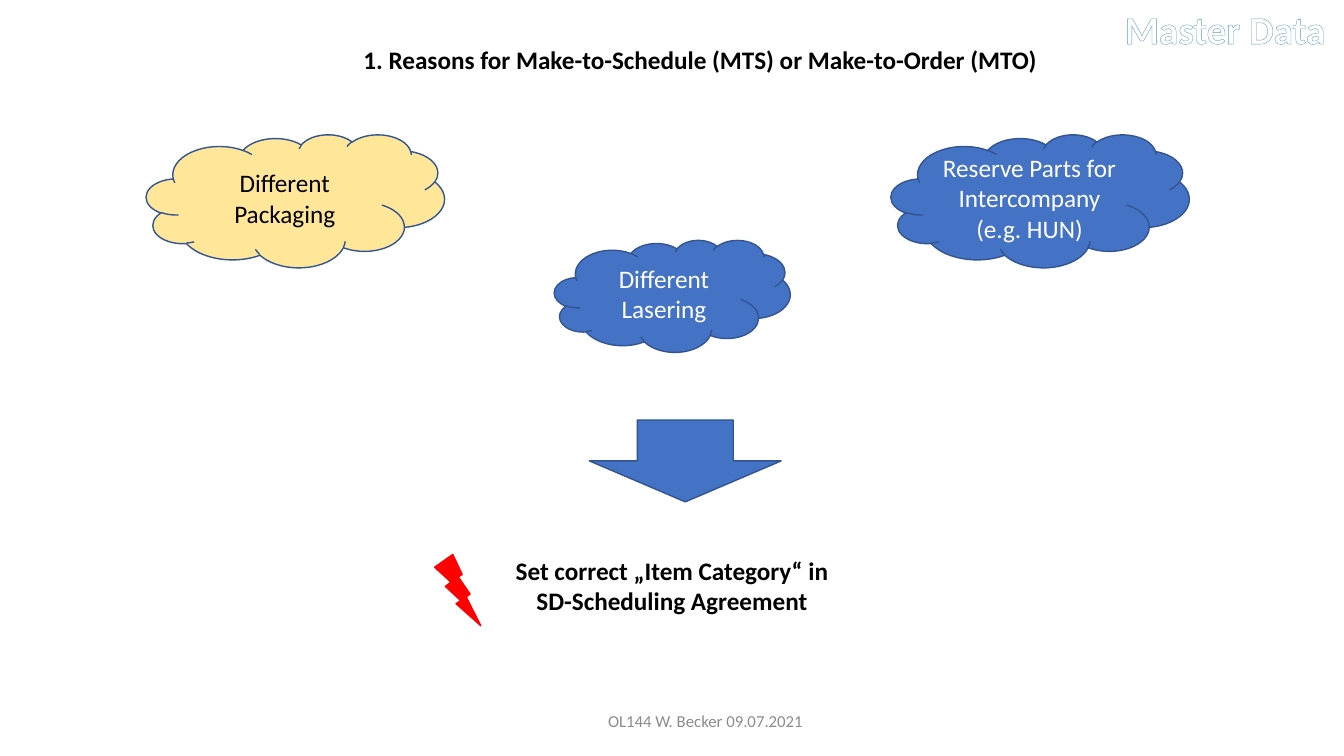
from lxml.etree import SubElement
from pptx import Presentation
from pptx.dml.color import RGBColor
from pptx.enum.shapes import MSO_SHAPE
from pptx.enum.text import MSO_ANCHOR, MSO_AUTO_SIZE, PP_ALIGN
from pptx.oxml.ns import qn
from pptx.util import Pt

BLUE, NAVY, RED = "4472C4", "325491", "FF0000"


def rgb(value):
    return RGBColor.from_string(value)


def write(tf, lines, size, color, bold=False, align=PP_ALIGN.CENTER):
    for i, line in enumerate(lines):
        p = tf.paragraphs[0] if i == 0 else tf.add_paragraph()
        p.alignment = align
        r = p.add_run()
        r.text = line
        r.font.name = "Calibri"
        r.font.size = Pt(size)
        r.font.bold = bold
        r.font.color.rgb = rgb(color)


prs = Presentation()
prs.slide_width, prs.slide_height = Pt(960), Pt(540)
s = prs.slides.add_slide(prs.slide_layouts[6])

# Clouds with reasons, arrow and lightning bolt
shapes = [
    (MSO_SHAPE.CLOUD, 396, 171.5, 168.5, 80, BLUE, NAVY, "Different Lasering", "FFFFFF"),
    (MSO_SHAPE.CLOUD, 636.5, 96, 213, 95, BLUE, NAVY,
     "Reserve Parts for Intercompany (e.g. HUN)", "FFFFFF"),
    (MSO_SHAPE.CLOUD, 104.5, 96, 213, 95, "FFE699", NAVY, "Different Packaging", "000000"),
    (MSO_SHAPE.DOWN_ARROW, 421, 300, 137, 58.5, BLUE, NAVY, None, None),
    (MSO_SHAPE.LIGHTNING_BOLT, 310.5, 396, 33, 51, RED, RED, None, None),
]
for kind, x, y, w, h, fill, line, text, color in shapes:
    sp = s.shapes.add_shape(kind, Pt(x), Pt(y), Pt(w), Pt(h))
    sp.shadow.inherit = False
    sp.fill.solid()
    sp.fill.fore_color.rgb = rgb(fill)
    sp.line.color.rgb = rgb(line)
    sp.line.width = Pt(1)
    if text:
        sp.text_frame.vertical_anchor = MSO_ANCHOR.MIDDLE
        write(sp.text_frame, [text], 18, color)

# Title, conclusion and corner heading
labels = [
    (252.5, 28, 502.5, 29, ["1. Reasons for Make-to-Schedule (MTS) or Make-to-Order (MTO)"],
     18, "000000", PP_ALIGN.LEFT),
    (360, 393, 240, 51, ["Set correct „Item Category“ in", "SD-Scheduling Agreement"],
     18, "000000", PP_ALIGN.CENTER),
    (795, 0, 160, 41, ["Master Data"], 28, "FFFFFF", PP_ALIGN.CENTER),
]
for x, y, w, h, lines, size, color, align in labels:
    tf = s.shapes.add_textbox(Pt(x), Pt(y), Pt(w), Pt(h)).text_frame
    tf.word_wrap = False
    tf.auto_size = MSO_AUTO_SIZE.SHAPE_TO_FIT_TEXT
    write(tf, lines, size, color, True, align)

# Outlined letters of the corner heading, the last label
rPr = tf.paragraphs[0].runs[0].font._element
ln = SubElement(rPr, qn("a:ln"), w=str(Pt(0.8)))
SubElement(SubElement(ln, qn("a:solidFill")), qn("a:srgbClr"), val="5B9BD5")
rPr.insert(0, ln)

# Footer
tf = s.shapes.add_textbox(Pt(318), Pt(500.5), Pt(372), Pt(29)).text_frame
tf.word_wrap = True
tf.vertical_anchor = MSO_ANCHOR.MIDDLE
write(tf, ["OL144 W. Becker 09.07.2021"], 12, "8C8C8C")

prs.save("out.pptx")
